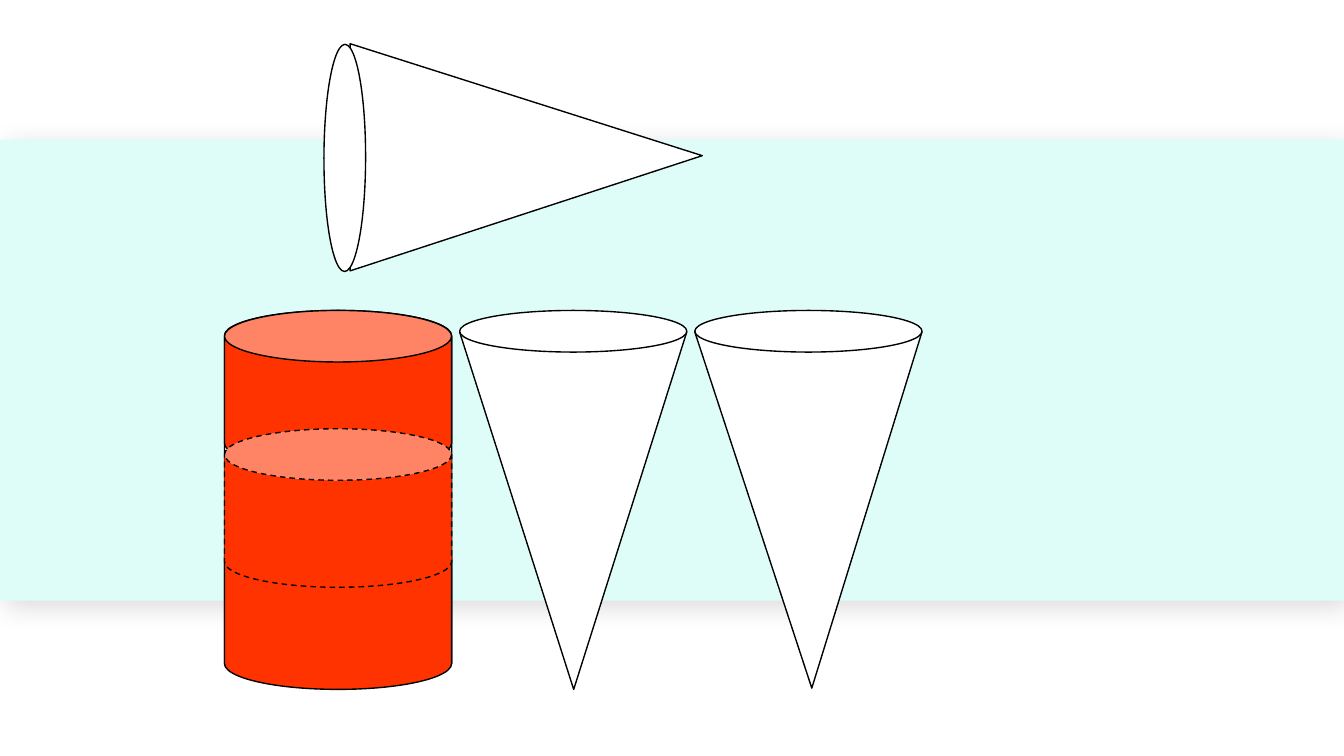
from pptx import Presentation
from pptx.dml.color import RGBColor
from pptx.enum.dml import MSO_LINE_DASH_STYLE as Dash
from pptx.enum.shapes import MSO_SHAPE as Shape
from pptx.oxml import parse_xml
from pptx.oxml.ns import nsdecls, qn
from pptx.util import Inches, Pt


def color(value):
    return RGBColor.from_string(value)


def draw(parent, kind, left, top, width, height, fill, turn=0, adjust=None):
    shape = parent.shapes.add_shape(
        kind, Inches(left), Inches(top), Inches(width), Inches(height))
    shape.shadow.inherit = False
    shape.fill.solid()
    shape.fill.fore_color.rgb = color(fill)
    shape.line.color.rgb = color("000000")
    shape.line.width = Pt(0.75)
    shape.rotation = turn
    if adjust is not None:
        shape.adjustments[0] = adjust
    return shape


WHITE, RED = "FFFFFF", "FF3300"
DIAMETER, RIM, TOP = 1.69, 0.31, 2.31

deck = Presentation()
deck.slide_width = Inches(10)
deck.slide_height = Inches(10 * 9 / 16)
page = deck.slides.add_slide(deck.slide_layouts[6])

band = draw(page, Shape.RECTANGLE, 0, 1.04, 10, 3.43, "DEFDF8")
band.line.fill.background()
effects = band._element.spPr.find(qn("a:effectLst"))
effects.append(parse_xml(
    f'<a:outerShdw {nsdecls("a")} blurRad="{Pt(15)}" dist="{Pt(5)}" '
    'dir="2700000" algn="ctr" rotWithShape="0"><a:srgbClr val="000000">'
    '<a:alpha val="15000"/></a:srgbClr></a:outerShdw>'))

draw(page, Shape.CAN, 1.67, TOP, DIAMETER, 2.81, WHITE, adjust=0.222)

for left, height, apex in [(5.17, 2.65, 0.485), (3.42, 2.66, 0.498)]:
    cone = page.shapes.add_group_shape()
    draw(cone, Shape.ISOSCELES_TRIANGLE, left, 2.47, DIAMETER, height, WHITE, 180, apex)
    draw(cone, Shape.OVAL, left, TOP, DIAMETER, RIM, WHITE)

lying_cone = page.shapes.add_group_shape()
draw(lying_cone, Shape.ISOSCELES_TRIANGLE, 3.07, -0.14, DIAMETER, 2.62, WHITE, 90, 0.493)
draw(lying_cone, Shape.OVAL, 1.72, 1.02, DIAMETER, RIM, WHITE, 90.1)

cylinder = page.shapes.add_group_shape()
for top in (TOP, 3.95, 3.19):
    layer = draw(cylinder, Shape.CAN, 1.67, top, DIAMETER, 1.18, RED, adjust=0.325)
layer.line.dash_style = Dash.DASH

deck.save("out.pptx")
